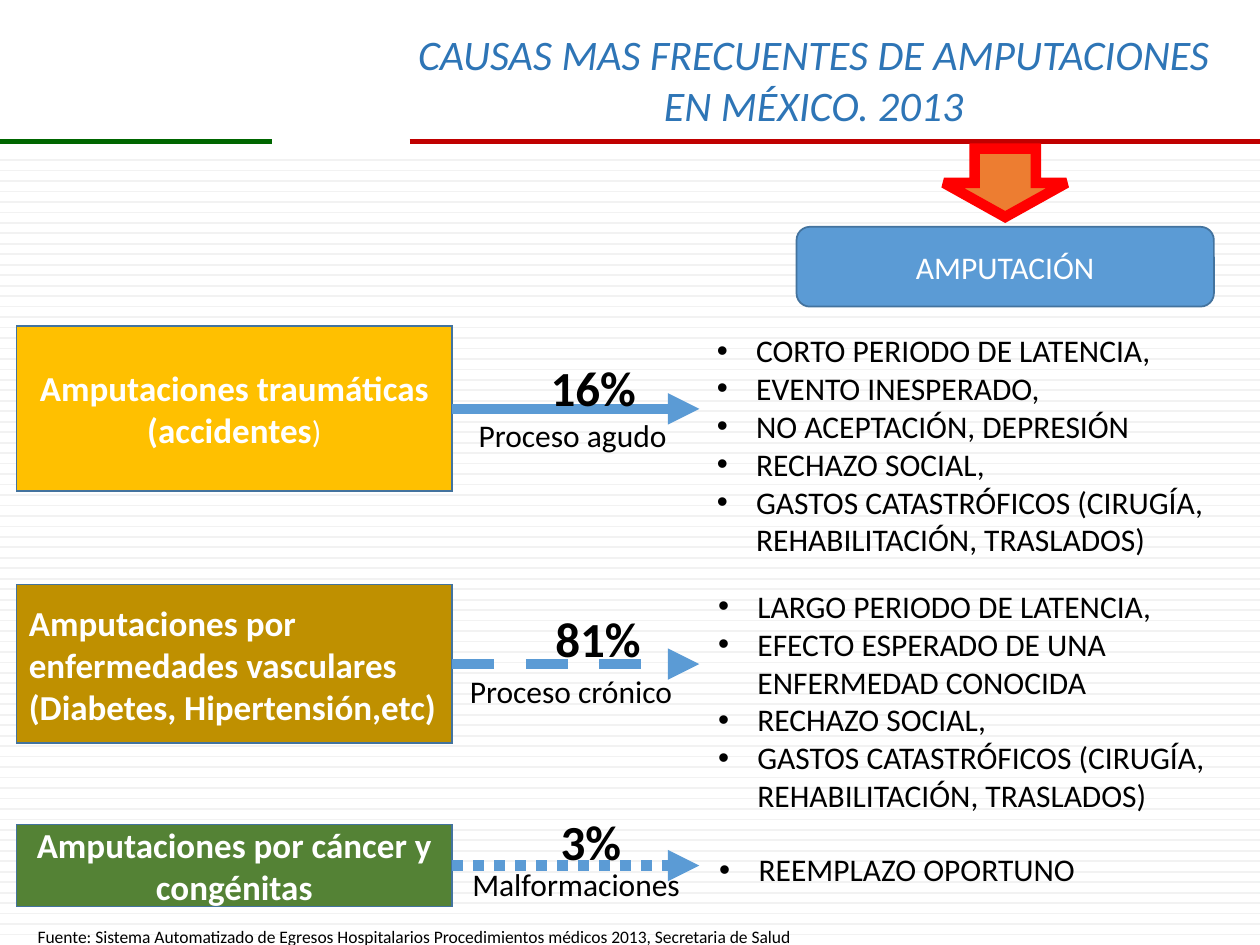
"""Build a slide on the most frequent causes of amputation in Mexico."""
import dataclasses
import typing

import lxml.etree
import pptx
import pptx.dml.color
import pptx.enum.dml
import pptx.enum.shapes
import pptx.enum.text
import pptx.oxml.ns
import pptx.util

Pt = pptx.util.Pt
Align = pptx.enum.text.PP_ALIGN
Dash = pptx.enum.dml.MSO_LINE
Preset = pptx.enum.shapes.MSO_SHAPE


@dataclasses.dataclass(frozen=True)
class Theme:
    font: str = "Calibri"
    black: str = "000000"
    white: str = "FFFFFF"
    rule: str = "F2F2F2"
    green: str = "006600"
    dark_red: str = "C00000"
    red: str = "FF0000"
    orange: str = "ED7D31"
    blue: str = "5B9BD5"
    outline: str = "43739E"
    title_blue: str = "2E75B6"
    gold: str = "FFC000"
    ochre: str = "BF9000"
    leaf: str = "548235"
    title: float = 24
    percent: float = 28
    cause: float = 20
    body: float = 18
    source: float = 10


THEME = Theme()


class Box(typing.NamedTuple):
    left: float
    top: float
    width: float
    height: float


@dataclasses.dataclass(frozen=True)
class Run:
    text: str
    size: float = THEME.body
    color: str = THEME.black
    bold: bool = False
    italic: bool = False


@dataclasses.dataclass(frozen=True)
class Paragraph:
    runs: tuple[Run, ...]
    align: typing.Any = Align.LEFT
    bullet: bool = False


@dataclasses.dataclass(frozen=True)
class Cause:
    name: Paragraph
    fill: str
    top: float
    height: float
    dash: typing.Any
    percent: str
    percent_box: Box
    percent_wrap: bool
    process: str
    process_box: Box
    effects: tuple[str, ...]
    effects_box: Box


def rgb(color: str) -> pptx.dml.color.RGBColor:
    return pptx.dml.color.RGBColor.from_string(color)


def child(parent: typing.Any, tag: str, **attributes: str) -> typing.Any:
    return lxml.etree.SubElement(parent, pptx.oxml.ns.qn(tag), attributes)


def write(frame: typing.Any, paragraphs: typing.Sequence[Paragraph]) -> None:
    for index, content in enumerate(paragraphs):
        paragraph = frame.add_paragraph() if index else frame.paragraphs[0]
        if content.bullet:
            properties = paragraph._p.get_or_add_pPr()
            properties.set("marL", str(Pt(22.5)))
            properties.set("indent", str(-Pt(22.5)))
            child(properties, "a:buFont", typeface="Arial")
            child(properties, "a:buChar", char="•")
        paragraph.alignment = content.align
        for piece in content.runs:
            run = paragraph.add_run()
            run.text = piece.text
            run.font.name = THEME.font
            run.font.size = Pt(piece.size)
            run.font.bold = piece.bold
            run.font.italic = piece.italic
            run.font.color.rgb = rgb(piece.color)


def add_text(slide: typing.Any, box: Box, paragraphs: typing.Sequence[Paragraph], wrap: bool = True) -> None:
    frame = slide.shapes.add_textbox(*map(Pt, box)).text_frame
    frame.word_wrap = wrap
    frame.auto_size = pptx.enum.text.MSO_AUTO_SIZE.SHAPE_TO_FIT_TEXT
    write(frame, paragraphs)


def add_panel(slide: typing.Any, preset: typing.Any, box: Box, fill: str, line: str = THEME.outline,
              width: float = 1, paragraphs: typing.Sequence[Paragraph] = ()) -> typing.Any:
    shape = slide.shapes.add_shape(preset, *map(Pt, box))
    shape.shadow.inherit = False
    shape.fill.solid()
    shape.fill.fore_color.rgb = rgb(fill)
    shape.line.color.rgb = rgb(line)
    shape.line.width = Pt(width)
    child(shape.line._get_or_add_ln(), "a:miter", lim="800000")
    shape.text_frame.word_wrap = True
    shape.text_frame.vertical_anchor = pptx.enum.text.MSO_ANCHOR.MIDDLE
    write(shape.text_frame, paragraphs)
    return shape


def add_line(slide: typing.Any, start: float, end: float, y: float, color: str, width: float) -> typing.Any:
    connector = slide.shapes.add_connector(
        pptx.enum.shapes.MSO_CONNECTOR.STRAIGHT, Pt(start), Pt(y), Pt(end), Pt(y))
    connector.line.color.rgb = rgb(color)
    connector.line.width = Pt(width)
    child(connector._element.spPr, "a:effectLst")
    return connector


def add_cause(slide: typing.Any, cause: Cause) -> None:
    box = Box(9.4, cause.top, 249, cause.height)
    panel = add_panel(slide, Preset.RECTANGLE, box, cause.fill, paragraphs=[cause.name])
    arrow = add_line(slide, box.left + box.width, 399.6, box.top + box.height / 2, THEME.blue, 6)
    arrow.begin_connect(panel, 3)
    arrow.line.dash_style = cause.dash
    child(arrow.line._get_or_add_ln(), "a:tailEnd", type="triangle")
    add_text(slide, cause.process_box, [Paragraph((Run(cause.process),))], wrap=False)
    add_text(slide, cause.effects_box, [Paragraph((Run(effect),), bullet=True) for effect in cause.effects])
    percent = Run(cause.percent, THEME.percent, bold=True)
    add_text(slide, cause.percent_box, [Paragraph((percent,))], cause.percent_wrap)


def cause_run(text: str) -> Run:
    return Run(text, THEME.cause, THEME.white, bold=True)


COSTS = "GASTOS CATASTRÓFICOS (CIRUGÍA, REHABILITACIÓN, TRASLADOS)"
CAUSES = (
    Cause(Paragraph((cause_run("Amputaciones traumáticas (accidentes"), Run(")", color=THEME.white)), Align.CENTER),
          THEME.gold, 186.5, 94.3, Dash.SOLID, "16%", Box(307.6, 201, 64, 41), False,
          "Proceso agudo", Box(266.4, 234, 123, 29),
          ("CORTO PERIODO DE LATENCIA,", "EVENTO INESPERADO,", "NO ACEPTACIÓN, DEPRESIÓN",
           "RECHAZO SOCIAL,", COSTS), Box(402.5, 185.8, 317.5, 138)),
    Cause(Paragraph((cause_run("Amputaciones por enfermedades vasculares (Diabetes, Hipertensión,etc)"),)),
          THEME.ochre, 334.1, 90.7, Dash.DASH, "81%", Box(310.3, 344.2, 87, 41), True,
          "Proceso crónico", Box(261.4, 380.2, 131, 29),
          ("LARGO PERIODO DE LATENCIA,", "EFECTO ESPERADO DE UNA ENFERMEDAD CONOCIDA",
           "RECHAZO SOCIAL,", COSTS), Box(403.2, 331.9, 317.5, 138)),
    Cause(Paragraph((cause_run("Amputaciones por cáncer y congénitas"),), Align.CENTER),
          THEME.leaf, 471.2, 46.8, Dash.ROUND_DOT, "3%", Box(313.2, 460.1, 49.7, 41), False,
          "Malformaciones", Box(262.8, 491, 134.6, 29),
          ("REEMPLAZO OPORTUNO",), Box(403.9, 482.4, 247.7, 29)),
)


def main() -> None:
    presentation = pptx.Presentation()
    presentation.slide_width, presentation.slide_height = Pt(720), Pt(540)
    slide = presentation.slides.add_slide(presentation.slide_layouts[6])
    for index in range(75):
        add_line(slide, 0, 720, 91.5 + 5.98 * index, THEME.rule, 1)
    add_line(slide, 0, 155.5, 80.8, THEME.green, 3)
    add_line(slide, 234, 720, 80.8, THEME.dark_red, 3)
    add_panel(slide, Preset.ROUNDED_RECTANGLE, Box(455.2, 129.6, 238.5, 45.6), THEME.blue,
              paragraphs=[Paragraph((Run("AMPUTACIÓN", color=THEME.white),), Align.CENTER)])
    add_panel(slide, Preset.DOWN_ARROW, Box(539.4, 85, 70, 39), THEME.orange, THEME.red, 6)
    title_lines = (("CAUSAS MAS FRECUENTES DE AMPUTACIONES", Align.LEFT), ("EN MÉXICO. 2013", Align.CENTER))
    add_text(slide, Box(231.8, 13, 476.6, 65.5), [
        Paragraph((Run(text, THEME.title, THEME.title_blue, italic=True),), align)
        for text, align in title_lines], wrap=False)
    for cause in CAUSES:
        add_cause(slide, cause)
    source = ("Fuente: Sistema Automatizado de Egresos Hospitalarios Procedimientos médicos 2013, "
              "Secretaria de Salud")
    add_text(slide, Box(14.4, 525.6, 487.5, 19.4), [Paragraph((Run(source, THEME.source),))])
    presentation.save("out.pptx")


if __name__ == "__main__":
    main()
